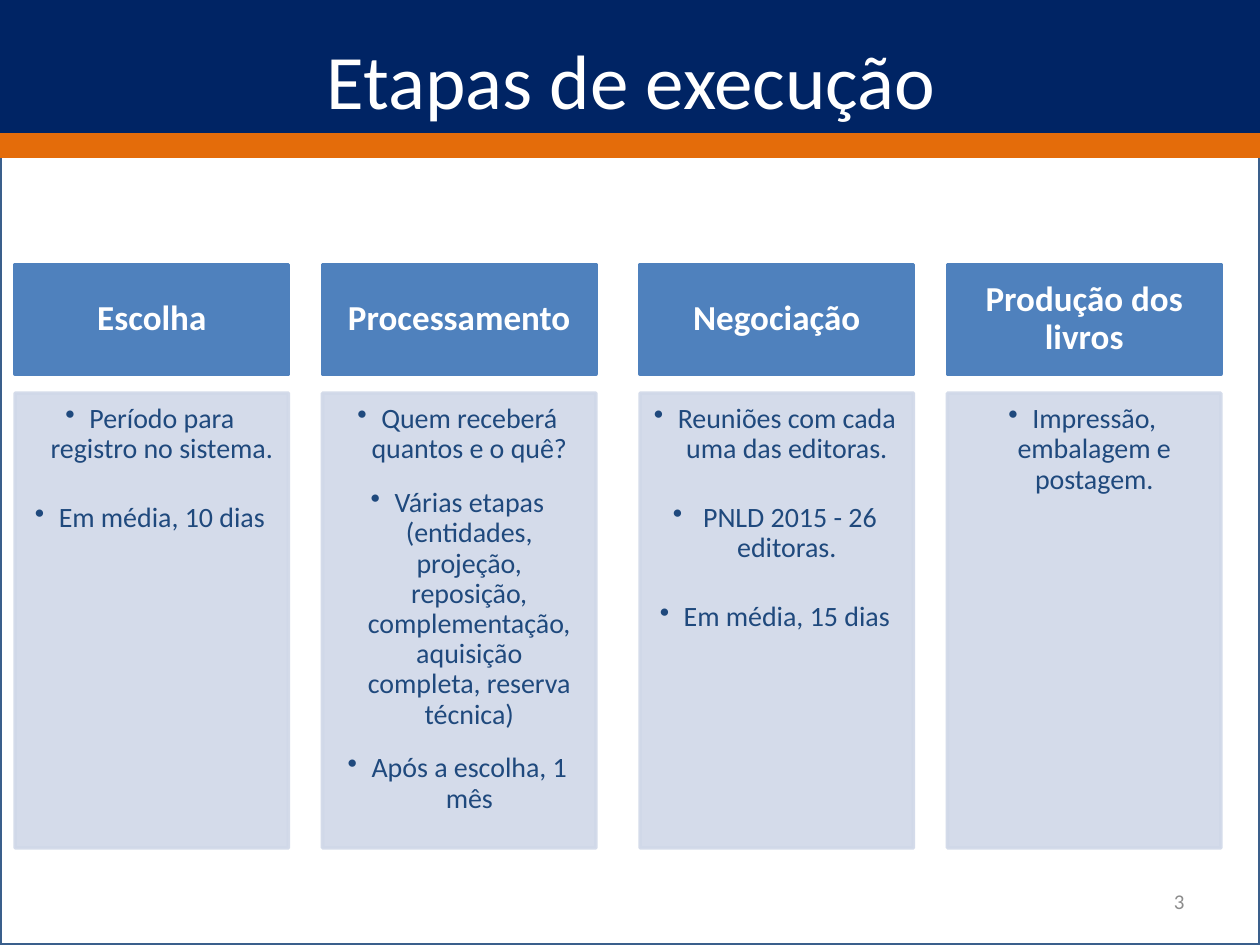
from lxml import etree
from pptx import Presentation
from pptx.dml.color import RGBColor
from pptx.enum.shapes import MSO_SHAPE
from pptx.enum.text import MSO_ANCHOR, PP_ALIGN
from pptx.oxml.ns import qn
from pptx.util import Inches, Pt

RECT = MSO_SHAPE.RECTANGLE
TOP, MIDDLE = MSO_ANCHOR.TOP, MSO_ANCHOR.MIDDLE
CENTER, RIGHT = PP_ALIGN.CENTER, PP_ALIGN.RIGHT
FONT = "Calibri"
COLORS = {
    "navy": "002464", "white": "FFFFFF", "frame": "3A5F8C",
    "orange": "E46C0A", "header": "4F81BD", "body": "D0D8E8",
    "text": "1F497D", "number": "8C8C8C",
}

# Left edge, heading, items, points between items
STAGES = [
    (0.12, "Escolha",
     ["Período para registro no sistema.", "Em média, 10 dias"], 22),
    (2.56, "Processamento",
     ["Quem receberá quantos e o quê?",
      "Várias etapas (entidades, projeção, reposição, complementação, "
      "aquisição completa, reserva técnica)",
      "Após a escolha, 1 mês"], 13.5),
    (5.08, "Negociação",
     ["Reuniões com cada uma das editoras.", " PNLD 2015 - 26 editoras.",
      "Em média, 15 dias"], 22),
    (7.52, "Produção dos livros",
     ["Impressão, embalagem e postagem."], 22),
]


def rgb(name):
    return RGBColor.from_string(COLORS[name])


def add_rect(s, box, fill, line):
    sp = s.shapes.add_shape(RECT, *map(Inches, box))
    sp.shadow.inherit = False
    sp.fill.solid()
    sp.fill.fore_color.rgb = rgb(fill)
    sp.line.color.rgb = rgb(line)
    sp.line.width = Pt(2)
    return sp


def set_frame(tf, anchor, insets=(0.1, 0.05, 0.1, 0.05)):
    tf.word_wrap = True
    tf.vertical_anchor = anchor
    (tf.margin_left, tf.margin_top,
     tf.margin_right, tf.margin_bottom) = map(Inches, insets)


def write(p, text, size, color, align=CENTER, bold=False):
    p.text = text
    p.alignment = align
    p.font.name, p.font.size, p.font.bold = FONT, Pt(size), bold
    p.font.color.rgb = rgb(color)


def add_label(s, box, text, size, color, align):
    tf = s.shapes.add_textbox(*map(Inches, box)).text_frame
    set_frame(tf, MIDDLE)
    write(tf.paragraphs[0], text, size, color, align)


def set_opacity(sp, percent):
    for clr in sp._element.spPr.iter(qn("a:srgbClr")):
        etree.SubElement(clr, qn("a:alpha"), val=str(percent * 1000))


def add_bullet(p):
    pPr = p._p.get_or_add_pPr()
    indent = Inches(0.19)
    pPr.set("marL", str(indent))
    pPr.set("indent", str(-indent))
    bullet = pPr.makeelement(qn("a:buChar"), {"char": "•"})
    pPr.insert_element_before(bullet, "a:tabLst", "a:defRPr", "a:extLst")


def add_banner(s, left, top, width):
    add_label(s, (left + 0.51, top, width - 1, 1.25), "Etapas de execução",
              44, "white", CENTER)
    add_rect(s, (left, top + 1.07, width + 0.03, 0.17), "orange", "orange")


def add_stage(s, left, top, width, heading, items, gap):
    head = add_rect(s, (left, top, width, 0.87), "header", "header")
    set_frame(head.text_frame, MIDDLE, (0.16, 0.09, 0.16, 0.09))
    p = head.text_frame.paragraphs[0]
    write(p, heading, 20, "white", bold=True)
    p.line_spacing = 0.9

    body = add_rect(s, (left, top + 1.02, width, 3.61), "body", "body")
    set_opacity(body, 90)
    tf = body.text_frame
    set_frame(tf, TOP, (0.09, 0.09, 0.12, 0.14))
    for i, item in enumerate(items):
        p = tf.add_paragraph() if i else tf.paragraphs[0]
        write(p, item, 16, "text")
        p.line_spacing = 0.9
        p.space_before = Pt(gap if i else 0)
        add_bullet(p)


def main():
    prs = Presentation()
    prs.slide_width, prs.slide_height = Inches(10), Inches(7.5)
    s = prs.slides.add_slide(prs.slide_layouts[6])
    s.background.fill.solid()
    s.background.fill.fore_color.rgb = rgb("navy")

    add_rect(s, (0, 1.24, 10, 6.26), "white", "frame")
    add_banner(s, 0, 0, 10)
    add_label(s, (7.17, 6.95, 2.33, 0.4), "3", 12, "number", RIGHT)
    for left, heading, items, gap in STAGES:
        add_stage(s, left, 2.1, 2.17, heading, items, gap)
    prs.save("out.pptx")


if __name__ == "__main__":
    main()
